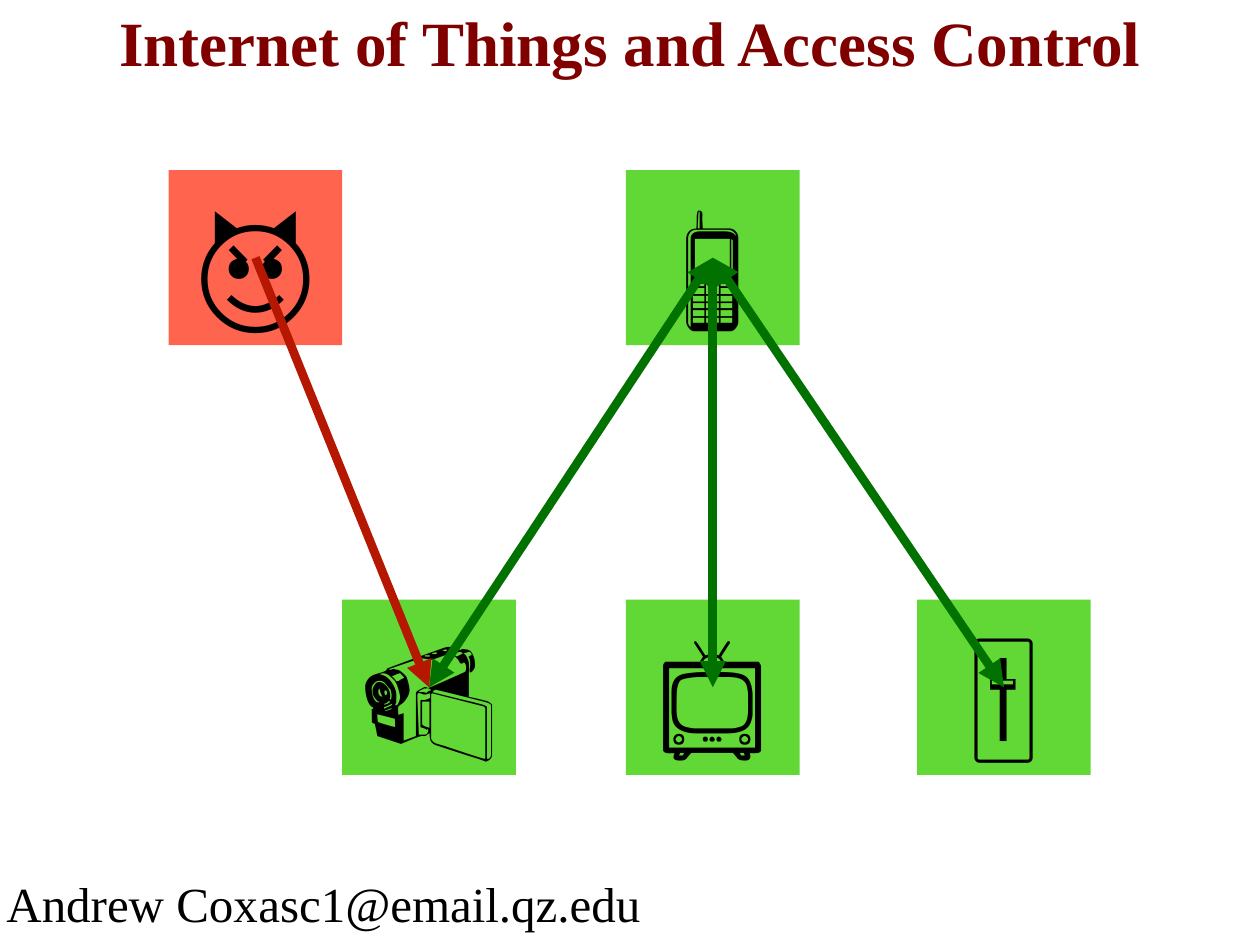
from pptx import Presentation
from pptx.dml.color import RGBColor
from pptx.enum.shapes import MSO_CONNECTOR, MSO_SHAPE
from pptx.enum.text import MSO_ANCHOR, MSO_AUTO_SIZE, PP_ALIGN
from pptx.oxml.ns import qn
from pptx.util import Cm, Pt
from lxml.etree import SubElement

WIDE, HIGH = 25.4, 19.05
TILE_W, TILE_H = 3.5, 3.53
SERIF, SANS = "Times New Roman", "Arial"
GREEN, RED = "61D836", "FF644E"
ALLOW, ATTACK = "017100", "B51700"


def paint(target, code):
    """Give a fill or a font colour from a hex string."""
    if hasattr(target, "solid"):
        target.solid()
        target = target.fore_color
    target.rgb = RGBColor.from_string(code)


def write(shape, text, face, size, code, align, anchor, pad, bold=False):
    """Set one formatted paragraph and return it."""
    frame = shape.text_frame
    frame.word_wrap = True
    frame.auto_size = MSO_AUTO_SIZE.NONE
    frame.vertical_anchor = anchor
    frame.margin_left = frame.margin_right = Cm(pad)
    frame.margin_top = frame.margin_bottom = Cm(pad)
    para = frame.paragraphs[0]
    para.text = text
    para.alignment = align
    para.space_before = Pt(0)
    for run in para.runs:
        run.font.name, run.font.size, run.font.bold = face, Pt(size), bold
        paint(run.font.color, code)
    return para


def place(shape, box):
    shape.left, shape.top, shape.width, shape.height = map(Cm, box)


def head(slide, box):
    """Heading across the top."""
    title = slide.shapes.title
    place(title, box)
    write(title, "Internet of Things and Access Control", SERIF, 36, "800000",
          PP_ALIGN.CENTER, MSO_ANCHOR.BOTTOM, 0.13, bold=True)


def foot(slide, box):
    """Author on the left, address on the right by a tab stop."""
    body = slide.placeholders[1]
    place(body, box)
    para = write(body, "Andrew Cox\tasc1@email.qz.edu", SERIF, 28, "000000",
                 PP_ALIGN.LEFT, MSO_ANCHOR.MIDDLE, 0.13)
    props = para._p.get_or_add_pPr()
    props.set("marL", "0")
    props.set("indent", "0")
    SubElement(props, qn("a:buNone"))
    stops = SubElement(props, qn("a:tabLst"))
    SubElement(stops, qn("a:tab"), pos=str(Cm(box[2] - 0.6)), algn="r")


def tile(slide, x, y, icon, code):
    """Square with an icon; returns its centre."""
    shape = slide.shapes.add_shape(
        MSO_SHAPE.RECTANGLE, Cm(x), Cm(y), Cm(TILE_W), Cm(TILE_H))
    shape.shadow.inherit = False
    shape.line.fill.background()
    paint(shape.fill, code)
    write(shape, icon, SANS, 74, "000000", PP_ALIGN.CENTER,
          MSO_ANCHOR.MIDDLE, 0.15)
    return x + TILE_W / 2, y + TILE_H / 2


def arrow(slide, start, end, code, ends):
    """Thick line with the given arrowheads."""
    link = slide.shapes.add_connector(
        MSO_CONNECTOR.STRAIGHT, *map(Cm, start + end))
    link.line.width = Pt(5)
    paint(link.line.fill, code)
    for tag in ends:
        SubElement(link.line._get_or_add_ln(), qn(tag), type="triangle")
    SubElement(link._element.spPr, qn("a:effectLst"))


def graph(slide, box):
    """Phone and intruder above, devices below, arrows between centres."""
    left, top, _, high = box
    low = top + high - TILE_H
    mid = left + 9.22
    lamp = tile(slide, left + 15.09, low, "🎚", GREEN)
    screen = tile(slide, mid, low, "📺", GREEN)
    camera = tile(slide, left + TILE_W, low, "📹", GREEN)
    thief = tile(slide, left, top, "😈", RED)
    phone = tile(slide, mid, top, "📱", GREEN)
    for device in (screen, camera, lamp):
        arrow(slide, device, phone, ALLOW, ("a:headEnd", "a:tailEnd"))
    arrow(slide, thief, camera, ATTACK, ("a:tailEnd",))


def main():
    deck = Presentation()
    deck.slide_width, deck.slide_height = Cm(WIDE), Cm(HIGH)
    slide = deck.slides.add_slide(deck.slide_layouts[1])
    foot(slide, (0, 17.37, WIDE, 1.68))
    head(slide, (0, 0, WIDE, 1.73))
    graph(slide, (3.4, 3.43, 18.59, 12.19))
    deck.save("out.pptx")


if __name__ == "__main__":
    main()
